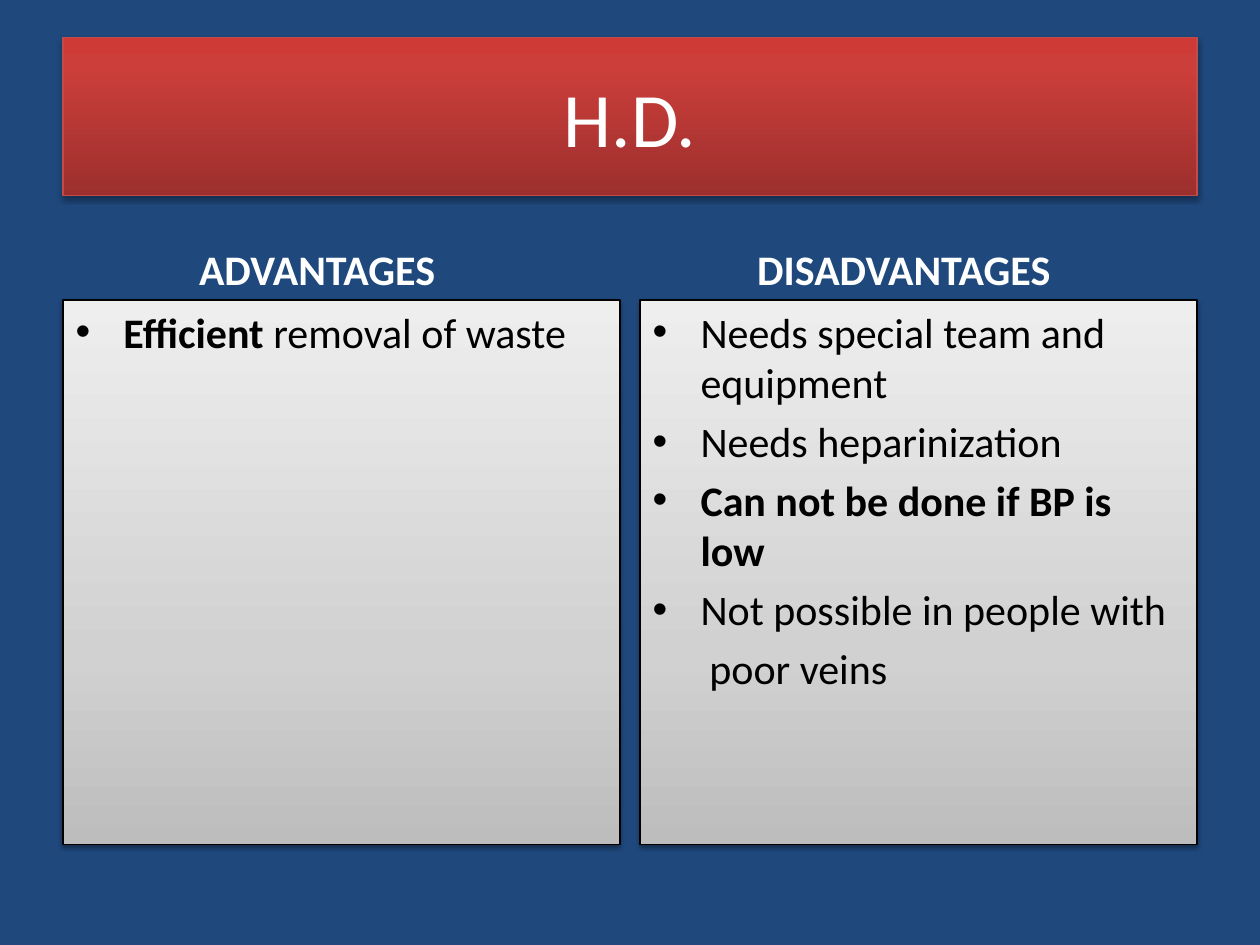
from lxml import etree
from pptx import Presentation
from pptx.dml.color import RGBColor
from pptx.enum import text
from pptx.oxml import ns
from pptx.util import Inches, Pt

COLORS = {
    "background": "1F497D", "white": "FFFFFF", "black": "000000",
    "title_line": "BF4C48",
}
TITLE_STOPS = [(0, "9C2F2D"), (80, "CB3E3A"), (100, "CE3B37")]
PANEL_STOPS = [(0, "BDBDBD"), (35, "D1D1D1"), (100, "EEEEEE")]
LEFT = 0.5
COLUMN_WIDTH = 4.42
COLUMN_STEP = 4.58
BULLET_INDENT = 0.38


def rgb(name):
    return RGBColor.from_string(COLORS[name])


def add_element(parent, tag, **attributes):
    element = etree.SubElement(parent, ns.qn(tag))
    for name, value in attributes.items():
        element.set(name, str(value))
    return element


def place(box, left, top, width, height, anchor):
    box.left, box.top = Inches(left), Inches(top)
    box.width, box.height = Inches(width), Inches(height)
    frame = box.text_frame
    frame.word_wrap = True
    frame.auto_size = text.MSO_AUTO_SIZE.NONE
    frame.vertical_anchor = anchor


def decorate(box, stops, line, opacity, distance):
    box.fill.gradient()
    box.fill.gradient_angle = 90
    properties = box.element.spPr
    stop_list = properties.find(".//" + ns.qn("a:gsLst"))
    for stop in list(stop_list):
        stop_list.remove(stop)
    for position, color in stops:
        stop = add_element(stop_list, "a:gs", pos=position * 1000)
        add_element(stop, "a:srgbClr", val=color)
    box.line.color.rgb = rgb(line)
    box.line.width = Pt(0.75)
    effects = add_element(properties, "a:effectLst")
    shadow = add_element(effects, "a:outerShdw", blurRad=Pt(3.1), dist=Pt(distance),
                         dir=90 * 60000, rotWithShape=0)
    color = add_element(shadow, "a:srgbClr", val=COLORS["black"])
    add_element(color, "a:alpha", val=opacity * 1000)


def add_runs(para, runs, size, color):
    for words, bold in runs:
        span = para.add_run()
        span.text = words
        span.font.name = "Calibri"
        span.font.size = Pt(size)
        span.font.bold = bold
        span.font.color.rgb = rgb(color)


def indent(para, left, bulleted=False):
    properties = para._p.get_or_add_pPr()
    properties.set("marL", str(Inches(left)))
    properties.set("indent", str(-Inches(left) if bulleted else 0))
    if bulleted:
        add_element(properties, "a:buFont", typeface="Arial")
        add_element(properties, "a:buChar", char="•")
    else:
        add_element(properties, "a:buNone")


def fill_title(box, words):
    place(box, LEFT, 0.3, 9, 1.25, text.MSO_ANCHOR.MIDDLE)
    decorate(box, TITLE_STOPS, "title_line", 35, 1.8)
    para = box.text_frame.paragraphs[0]
    para.alignment = text.PP_ALIGN.CENTER
    add_runs(para, [(words, False)], 44, "white")


def fill_heading(box, left, words, offset):
    place(box, left, 1.68, COLUMN_WIDTH, 0.7, text.MSO_ANCHOR.BOTTOM)
    para = box.text_frame.paragraphs[0]
    indent(para, offset)
    para.space_before = Pt(0)
    add_runs(para, [(words, True)], 24, "white")


def fill_panel(box, left, items):
    place(box, left, 2.38, COLUMN_WIDTH, 4.32, text.MSO_ANCHOR.TOP)
    decorate(box, PANEL_STOPS, "black", 38, 1.6)
    frame = box.text_frame
    for number, (bulleted, runs) in enumerate(items):
        para = frame.add_paragraph() if number else frame.paragraphs[0]
        indent(para, BULLET_INDENT if bulleted else 0.45, bulleted)
        para.space_before = Pt(4.8 if number else 0)
        add_runs(para, runs, 24, "black")


def main():
    deck = Presentation()
    deck.slide_width, deck.slide_height = Inches(10), Inches(7.5)
    page = deck.slides.add_slide(deck.slide_layouts.get_by_name("Comparison"))
    page.background.fill.solid()
    page.background.fill.fore_color.rgb = rgb("background")
    fill_title(page.shapes.title, "H.D.")
    columns = [
        ("ADVANTAGES", 0.98, [
            (True, [("Efficient", True), (" removal of waste", False)]),
        ]),
        ("DISADVANTAGES", 0.83, [
            (True, [("Needs special team and equipment", False)]),
            (True, [("Needs heparinization", False)]),
            (True, [("Can not be done if BP is low", True)]),
            (True, [("Not possible in people with", False)]),
            (False, [("poor veins", False)]),
        ]),
    ]
    for number, (heading, offset, items) in enumerate(columns):
        left = LEFT + number * COLUMN_STEP
        fill_heading(page.placeholders[1 + 2 * number], left, heading, offset)
        fill_panel(page.placeholders[2 + 2 * number], left, items)
    deck.save("out.pptx")


if __name__ == "__main__":
    main()
